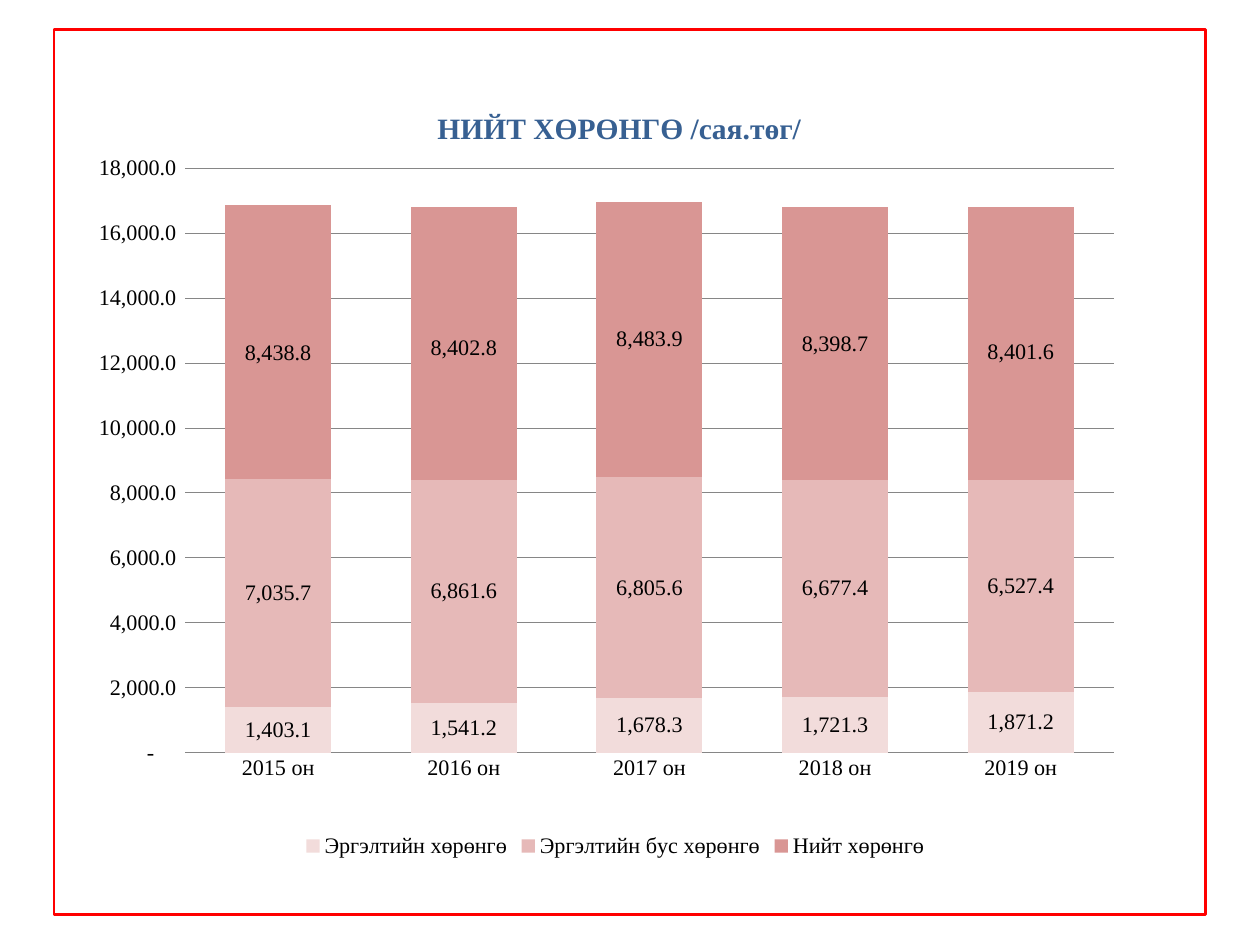
import pptx
import pptx.util
import pptx.dml.color
import pptx.chart.data
import pptx.enum.chart
import pptx.enum.shapes
import pptx.oxml
import pptx.oxml.ns

TITLE = "НИЙТ ХӨРӨНГӨ /сая.төг/"
YEARS = ["2015 он", "2016 он", "2017 он", "2018 он", "2019 он"]
SERIES = [
    ("Эргэлтийн хөрөнгө", "F2DCDB", (1403.1, 1541.2, 1678.3, 1721.3, 1871.2)),
    ("Эргэлтийн бус хөрөнгө", "E6B9B8", (7035.7, 6861.6, 6805.6, 6677.4, 6527.4)),
    ("Нийт хөрөнгө", "D99694", (8438.8, 8402.8, 8483.9, 8398.7, 8401.6)),
]
SHIFTS = {0: 13, 1: 5, 4: 9}
FORMAT = '_(* #,##0.0_);_(* \\(#,##0.0\\);_(* "-"??_);_(@_)'
THEME = {
    "font": "Times New Roman", "body": 18, "head": 24,
    "text": "000000", "title": "376092", "frame": "FF0000", "grid": "868686",
}

SCALE = 9144
SLIDE = (1422, 1067)
FRAME = (61, 33, 1300, 1000)
CHART = (94, 75, 1200, 900)
PLOT = (115, 115, 1048, 660)
HEAD = (394, 42)
LEGEND = (244, 863)


def emu(box):
    return [pptx.util.Emu(n * SCALE) for n in box]


def color(name):
    return pptx.dml.color.RGBColor.from_string(THEME.get(name, name))


def style(font, size="body", tint="text", bold=False):
    font.name = THEME["font"]
    font.size = pptx.util.Pt(THEME[size])
    font.color.rgb = color(tint)
    font.bold = bold


def rule(line, tint="grid", width=0.75):
    line.color.rgb = color(tint)
    line.width = pptx.util.Pt(width)


def layout(box, inner=False, edge=True):
    part = '<c:layoutTarget val="inner"/>' if inner else ""
    if edge:
        part += '<c:xMode val="edge"/><c:yMode val="edge"/>'
    for key, size, full in zip("xywh", box, CHART[2:] * 2):
        part += f'<c:{key} val="{size / full:.3f}"/>'
    space = pptx.oxml.ns.nsdecls("c")
    return pptx.oxml.parse_xml(
        f"<c:layout {space}><c:manualLayout>{part}</c:manualLayout></c:layout>")


def place(node, after, box, inner=False, edge=True):
    for old in node.findall(pptx.oxml.ns.qn("c:layout")):
        node.remove(old)
    new = layout(box, inner, edge)
    prior = node.find(pptx.oxml.ns.qn(after)) if after else None
    node.insert(0 if prior is None else node.index(prior) + 1, new)
    return new


def nudge(point, drop):
    style(point.data_label.font)
    for node in point.data_label.font._element.iterancestors(pptx.oxml.ns.qn("c:dLbl")):
        new = place(node, "c:idx", (0, drop), edge=False)
        form = pptx.oxml.parse_xml(f'<c:numFmt {pptx.oxml.ns.nsdecls("c")} sourceLinked="0"/>')
        form.set("formatCode", FORMAT)
        new.addnext(form)


def fill(series, tint):
    series.format.fill.solid()
    series.format.fill.fore_color.rgb = color(tint)
    labels = series.data_labels
    labels.show_value = True
    labels.number_format = FORMAT
    labels.number_format_is_linked = False
    style(labels.font)


def axes(chart):
    none = pptx.enum.chart.XL_TICK_MARK.NONE
    for axis in (chart.category_axis, chart.value_axis):
        axis.major_tick_mark = axis.minor_tick_mark = none
        style(axis.tick_labels.font)
    rule(chart.category_axis.format.line)
    value = chart.value_axis
    value.format.line.fill.background()
    value.minimum_scale, value.maximum_scale, value.major_unit = 0, 18000, 2000
    value.has_major_gridlines = True
    rule(value.major_gridlines.format.line)
    value.tick_labels.number_format = FORMAT
    value.tick_labels.number_format_is_linked = False


def draw(slide):
    data = pptx.chart.data.CategoryChartData()
    data.categories = YEARS
    for name, tint, values in SERIES:
        data.add_series(name, values)
    kind = pptx.enum.chart.XL_CHART_TYPE.COLUMN_STACKED
    chart = slide.shapes.add_chart(kind, *emu(CHART), data).chart
    style(chart.font)
    plot = chart.plots[0]
    plot.gap_width, plot.overlap, plot.vary_by_categories = 75, 100, False
    for series, (name, tint, values) in zip(plot.series, SERIES):
        fill(series, tint)
    for spot, drop in SHIFTS.items():
        nudge(plot.series[-1].points[spot], drop)
    axes(chart)

    chart.has_title = True
    run = chart.chart_title.text_frame.paragraphs[0].add_run()
    run.text = TITLE
    style(run.font, "head", "title", True)
    chart.chart_title.include_in_layout = False
    place(chart.chart_title._element, "c:tx", HEAD)

    chart.has_legend = True
    chart.legend.position = pptx.enum.chart.XL_LEGEND_POSITION.BOTTOM
    chart.legend.include_in_layout = False
    style(chart.legend.font)
    place(chart.legend._element, "c:legendPos", LEGEND)
    place(chart._chartSpace.chart.plotArea, None, PLOT, inner=True)


def main():
    deck = pptx.Presentation()
    deck.slide_width, deck.slide_height = emu(SLIDE)
    slide = deck.slides.add_slide(deck.slide_layouts[6])
    frame = slide.shapes.add_shape(pptx.enum.shapes.MSO_SHAPE.RECTANGLE, *emu(FRAME))
    frame.shadow.inherit = False
    frame.fill.background()
    rule(frame.line, "frame", 2.25)
    draw(slide)
    deck.save("out.pptx")


if __name__ == "__main__":
    main()
